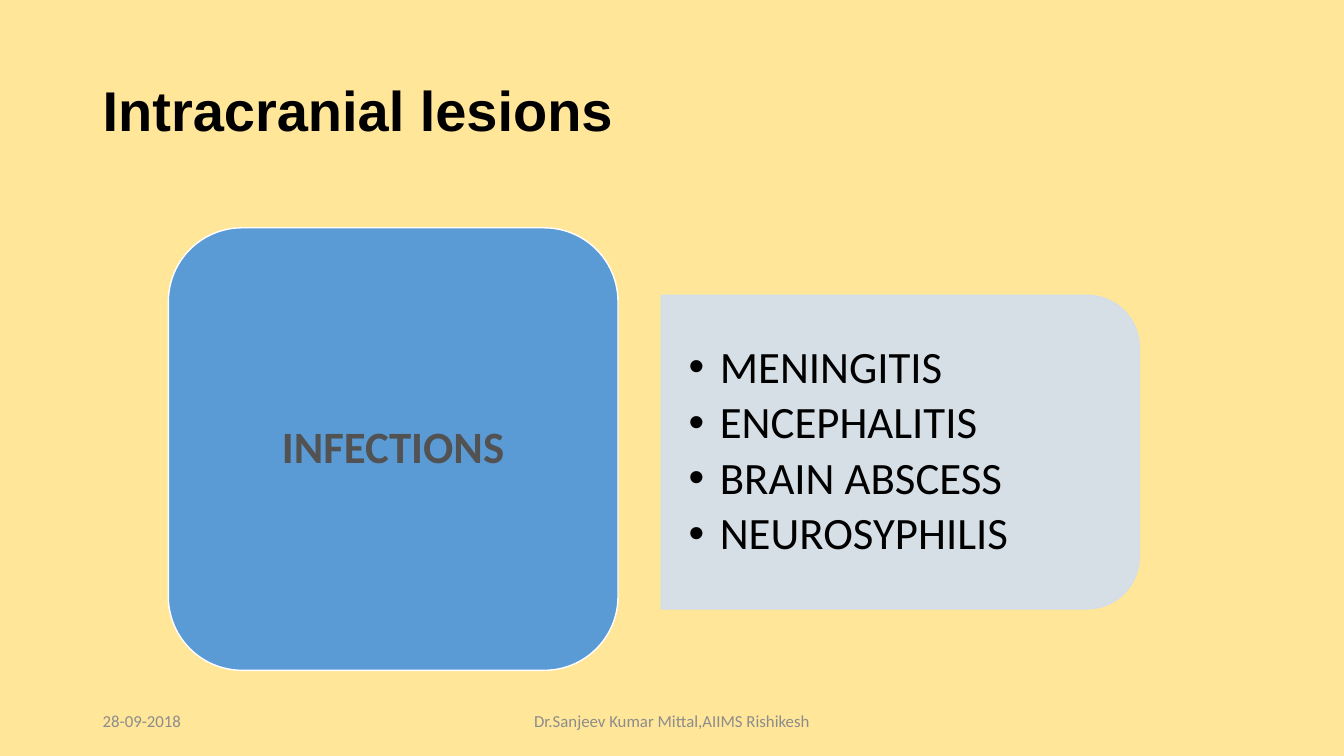
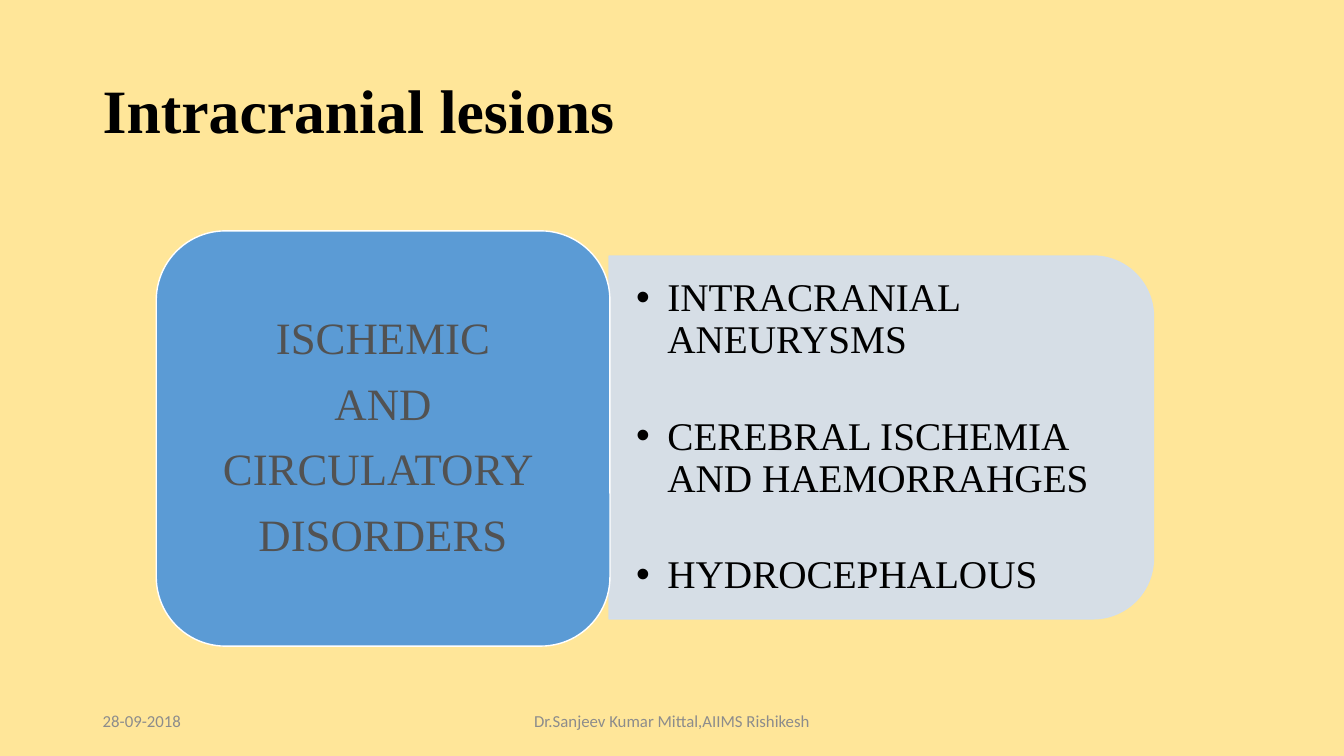
"""Build two slides on intracranial lesions, each a category block beside a bulleted panel."""
import dataclasses

import pptx
import pptx.dml.color
import pptx.enum.shapes
import pptx.enum.text
import pptx.oxml
import pptx.oxml.ns
import pptx.util

ALIGN = pptx.enum.text.PP_ALIGN
ANCHOR = pptx.enum.text.MSO_ANCHOR
SHAPE = pptx.enum.shapes.MSO_SHAPE
Inches = pptx.util.Inches
Pt = pptx.util.Pt


@dataclasses.dataclass(frozen=True)
class Theme:
    """Colours, fonts and type sizes."""
    background: str = "FFE699"
    block: str = "5B9BD5"
    block_line: str = "FFFFFF"
    block_text: str = "525252"
    panel: str = "D2DEEF"
    text: str = "000000"
    muted: str = "8C8C8C"
    panel_alpha: int = 90
    sans: str = "Calibri"
    serif: str = "Times New Roman"
    title_sans: str = "Arial"
    block_size: int = 32
    footer_size: int = 12


THEME = Theme()
WIDTH, HEIGHT = 13.33, 7.5
MARGIN = 0.92
CORNER = 1 / 6
CORNER_INSET = CORNER * 0.29
TITLE_BOX = (MARGIN, 0.4, WIDTH - 2 * MARGIN, 1.45)
FOOTER_TOP, FOOTER_HEIGHT = 6.95, 0.4
FOOTERS = [
    ("28-09-2018", MARGIN, 3, ALIGN.LEFT),
    ("Dr.Sanjeev Kumar Mittal,AIIMS Rishikesh", (WIDTH - 4.5) / 2, 4.5, ALIGN.CENTER),
]
SLIDES = [
    {
        "title": "Intracranial lesions",
        "title_style": {"font": THEME.title_sans, "size": 40},
        "block": ["INFECTIONS"],
        "block_box": (1.67, 2.26, 4.46, 4.39),
        "block_bold": True,
        "items": ["MENINGITIS", "ENCEPHALITIS", "BRAIN ABSCESS", "NEUROSYPHILIS"],
        "panel_box": (6.56, 2.93, 4.74, 3.11),
        "font": THEME.sans,
        "item_size": 32,
        "item_gap": 0,
    },
    {
        "title": "Intracranial lesions",
        "title_style": {"font": THEME.serif, "size": 44},
        "block": ["ISCHEMIC", "AND", "CIRCULATORY ", "DISORDERS"],
        "block_box": (1.55, 2.29, 4.5, 4.12),
        "block_bold": False,
        "items": ["INTRACRANIAL ANEURYSMS", "CEREBRAL ISCHEMIA AND HAEMORRAHGES", "HYDROCEPHALOUS"],
        "panel_box": (6.04, 2.54, 5.4, 3.6),
        "font": THEME.serif,
        "item_size": 28,
        "item_gap": 34,
    },
]


def rgb(colour):
    return pptx.dml.color.RGBColor.from_string(colour)


def add_child(parent, tag, **attributes):
    child = pptx.oxml.parse_xml(f"<{tag} {pptx.oxml.ns.nsdecls('a')}/>")
    for name, value in attributes.items():
        child.set(name, str(value))
    parent.append(child)


def add_bullet(paragraph, indent):
    properties = paragraph._p.get_or_add_pPr()
    properties.set("marL", str(Inches(indent)))
    properties.set("indent", str(-Inches(indent)))
    add_child(properties, "a:buFont", typeface=THEME.title_sans)
    add_child(properties, "a:buChar", char="•")


def write_text(shape, lines, *, font, size, colour=THEME.text, bold=False, align=ALIGN.LEFT,
               insets=(0.1, 0.05), line_spacing=0.9, before=0, after=0, indent=0):
    frame = shape.text_frame
    frame.word_wrap = True
    frame.vertical_anchor = ANCHOR.MIDDLE
    frame.margin_left = frame.margin_right = Inches(insets[0])
    frame.margin_top = frame.margin_bottom = Inches(insets[1])
    for index, line in enumerate(lines):
        paragraph = frame.add_paragraph() if index else frame.paragraphs[0]
        paragraph.alignment = align
        paragraph.line_spacing = line_spacing
        paragraph.space_before = Pt(before if index else 0)
        paragraph.space_after = Pt(after)
        if indent:
            add_bullet(paragraph, indent)
        run = paragraph.add_run()
        run.text = line
        run.font.name = font
        run.font.size = Pt(size)
        run.font.bold = bold
        run.font.color.rgb = rgb(colour)


def add_text(slide, box, lines, **style):
    write_text(slide.shapes.add_textbox(*map(Inches, box)), lines, **style)


def add_shape(slide, kind, box, fill, line, alpha=100):
    shape = slide.shapes.add_shape(kind, *map(Inches, box))
    shape.shadow.inherit = False
    shape.fill.solid()
    shape.line.width = Pt(1)
    for paint, colour in ((shape.fill, fill), (shape.line.fill, line)):
        paint.solid()
        paint.fore_color.rgb = rgb(colour)
    if alpha < 100:
        for colour in shape._element.spPr.iter(pptx.oxml.ns.qn("a:srgbClr")):
            add_child(colour, "a:alpha", val=alpha * 1000)
    return shape


def add_panel(slide, content):
    left, top, width, height = content["panel_box"]
    turn = (width - height) / 2
    panel = add_shape(slide, SHAPE.ROUND_2_SAME_RECTANGLE, (left + turn, top - turn, height, width),
                      THEME.panel, THEME.panel, THEME.panel_alpha)
    panel.rotation = 90
    inset = height * CORNER_INSET
    add_text(slide, (left, top + inset, width - inset, height - 2 * inset), content["items"],
             font=content["font"], size=content["item_size"], insets=(0.27, 0.14),
             before=content["item_gap"], after=content["item_size"] * 0.16, indent=0.31)


def add_block(slide, content):
    block = add_shape(slide, SHAPE.ROUNDED_RECTANGLE, content["block_box"], THEME.block, THEME.block_line)
    write_text(block, content["block"], font=content["font"], size=THEME.block_size,
               colour=THEME.block_text, bold=content["block_bold"], align=ALIGN.CENTER,
               insets=(0.13, 0.07), after=THEME.block_size * 0.39)


def build_slide(presentation, content):
    slide = presentation.slides.add_slide(presentation.slide_layouts[6])
    slide.background.fill.solid()
    slide.background.fill.fore_color.rgb = rgb(THEME.background)
    add_text(slide, TITLE_BOX, [content["title"]], bold=True, **content["title_style"])
    add_panel(slide, content)
    add_block(slide, content)
    for text, left, width, align in FOOTERS:
        add_text(slide, (left, FOOTER_TOP, width, FOOTER_HEIGHT), [text], font=THEME.sans,
                 size=THEME.footer_size, colour=THEME.muted, align=align, line_spacing=1.0)


def main():
    presentation = pptx.Presentation()
    presentation.slide_width = Inches(WIDTH)
    presentation.slide_height = Inches(HEIGHT)
    for content in SLIDES:
        build_slide(presentation, content)
    presentation.save("out.pptx")


if __name__ == "__main__":
    main()
